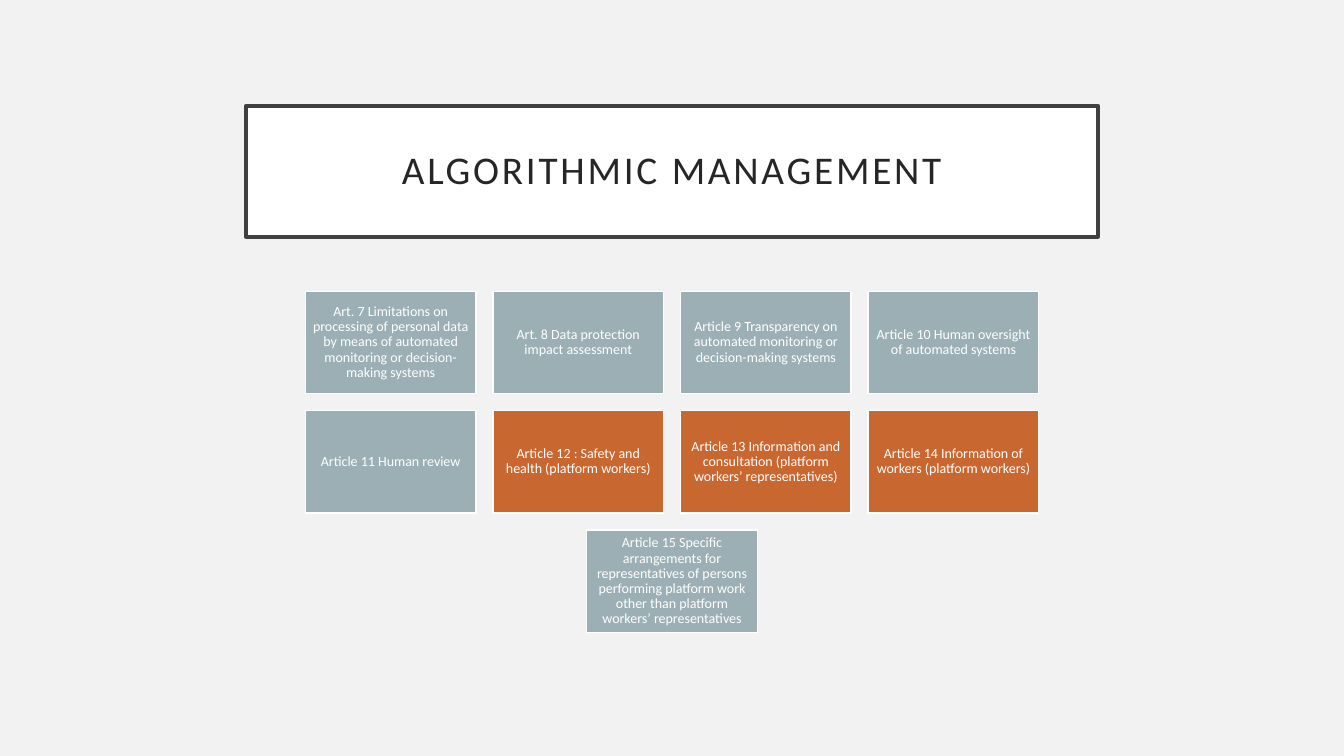
from pptx import Presentation
from pptx.dml.color import RGBColor
from pptx.enum import shapes, text
from pptx.util import Pt

TITLE = "ALGORITHMIC MANAGEMENT"
ARTICLE_ROWS = [
    [
        ("Art. 7 Limitations on processing of personal data by means of automated "
         "monitoring or decision-making systems", "general"),
        ("Art. 8 Data protection impact assessment", "general"),
        ("Article 9 Transparency on automated monitoring or decision-making systems", "general"),
        ("Article 10 Human oversight of automated systems", "general"),
    ],
    [
        ("Article 11 Human review", "general"),
        ("Article 12 : Safety and health (platform workers)", "workers"),
        ("Article 13 Information and consultation (platform workers’ representatives)", "workers"),
        ("Article 14 Information of workers (platform workers)", "workers"),
    ],
    [
        ("Article 15 Specific arrangements for representatives of persons performing "
         "platform work other than platform workers’ representatives", "general"),
    ],
]
COLORS = {
    "background": "F2F2F2",
    "white": "FFFFFF",
    "frame": "404040",
    "title": "262626",
    "general": "9BAFB5",
    "workers": "C96731",
}
FONT = "Calibri"
SLIDE_WIDTH, SLIDE_HEIGHT = 960, 540
TITLE_BOX = (175.7, 75.6, 608.6, 93.6)
CARD_WIDTH, CARD_HEIGHT, GAP = 121.8, 73.1, 12.2
CARDS_TOP = 208


def color(name):
    return RGBColor.from_string(COLORS[name])


def style_box(shape, fill, line, line_width, margin):
    shape.fill.solid()
    shape.fill.fore_color.rgb = color(fill)
    shape.line.color.rgb = color(line)
    shape.line.width = Pt(line_width)
    frame = shape.text_frame
    frame.word_wrap = True
    frame.auto_size = text.MSO_AUTO_SIZE.NONE
    frame.vertical_anchor = text.MSO_ANCHOR.MIDDLE
    frame.margin_left = frame.margin_right = Pt(margin)
    frame.margin_top = frame.margin_bottom = Pt(margin)


def write(shape, words, size, font_color):
    shape.text_frame.text = words
    paragraph = shape.text_frame.paragraphs[0]
    paragraph.alignment = text.PP_ALIGN.CENTER
    paragraph.line_spacing = 0.9
    paragraph.font.name = FONT
    paragraph.font.size = Pt(size)
    paragraph.font.color.rgb = color(font_color)
    return paragraph


def add_title(slide):
    title = slide.shapes.title
    title.left, title.top, title.width, title.height = map(Pt, TITLE_BOX)
    style_box(title, "white", "frame", 2.5, 14.4)
    paragraph = write(title, TITLE, 28, "title")
    # Letter spacing, in hundredths of a point
    paragraph.runs[0].font._element.set("spc", "200")


def add_cards(slide):
    for row, articles in enumerate(ARTICLE_ROWS):
        row_width = len(articles) * (CARD_WIDTH + GAP) - GAP
        left = (SLIDE_WIDTH - row_width) / 2
        top = CARDS_TOP + row * (CARD_HEIGHT + GAP)
        for column, (words, group) in enumerate(articles):
            card = slide.shapes.add_shape(
                shapes.MSO_SHAPE.RECTANGLE,
                Pt(left + column * (CARD_WIDTH + GAP)), Pt(top),
                Pt(CARD_WIDTH), Pt(CARD_HEIGHT))
            card.shadow.inherit = False
            style_box(card, group, "white", 1, 3)
            write(card, words, 10, "white")


def main():
    presentation = Presentation()
    presentation.slide_width, presentation.slide_height = Pt(SLIDE_WIDTH), Pt(SLIDE_HEIGHT)
    slide = presentation.slides.add_slide(presentation.slide_layouts.get_by_name("Title Only"))
    slide.background.fill.solid()
    slide.background.fill.fore_color.rgb = color("background")
    add_title(slide)
    add_cards(slide)
    presentation.save("out.pptx")


if __name__ == "__main__":
    main()
